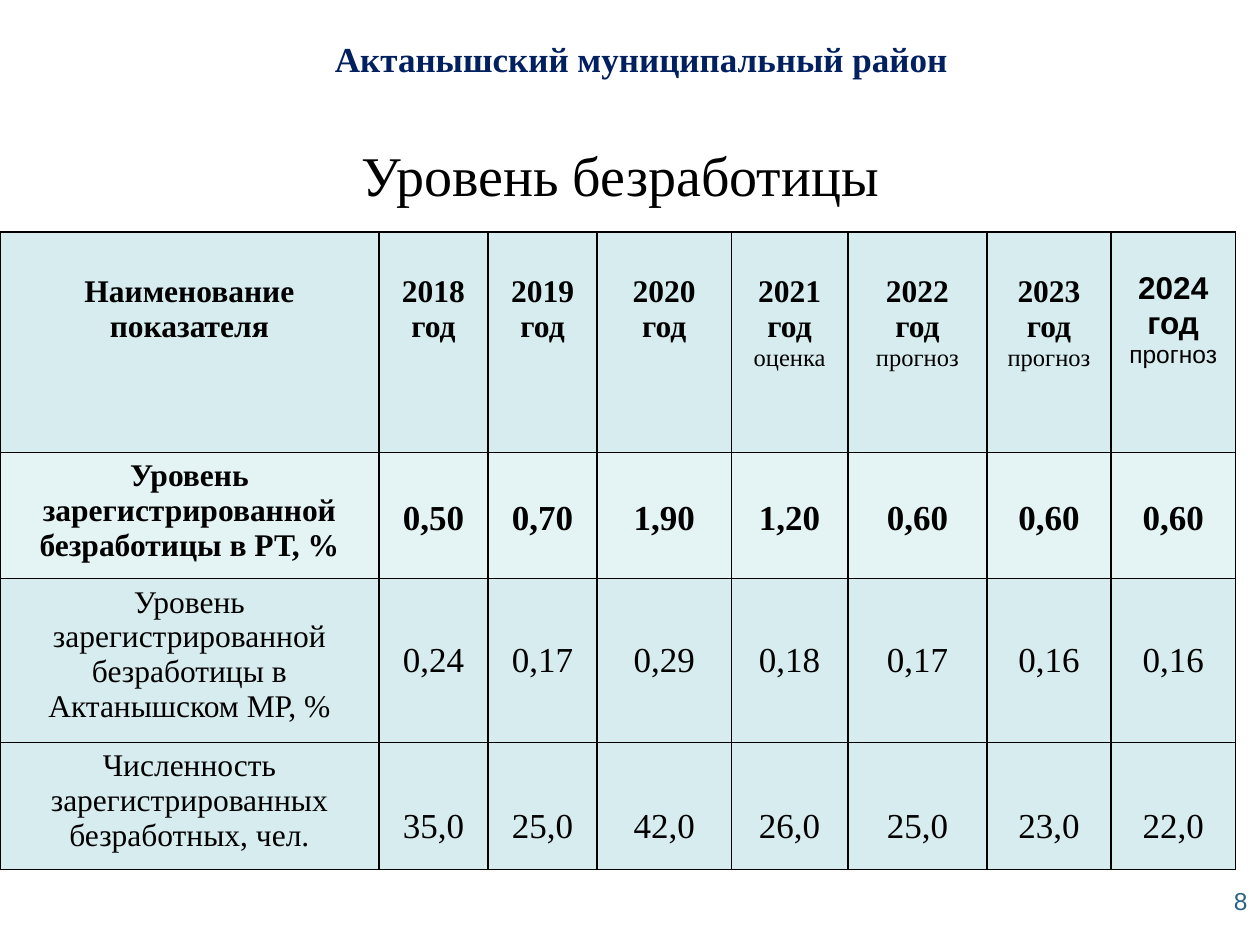
from lxml import etree
from pptx import Presentation
from pptx.dml.color import RGBColor
from pptx.enum import text as t
from pptx.oxml import ns
from pptx.util import Pt

SERIF = "Times New Roman"
MID = t.PP_ALIGN.CENTER


def write(frame, words, size=18, bold=False, font=SERIF, color="000000",
          align=MID, note=""):
    """Fill a frame, one paragraph per line; a note ends the last one at 14 pt."""
    frame.word_wrap = True
    lines = words.split("\n")
    for i, line in enumerate(lines):
        para = frame.paragraphs[0] if i == 0 else frame.add_paragraph()
        para.alignment = align
        runs = [(line, size, bold)]
        if i == len(lines) - 1:
            runs.append((note, 14, False))
        for part, pts, heavy in runs:
            if part:
                run = para.add_run()
                run.text = part
                run.font.size = Pt(pts)
                run.font.bold = heavy
                run.font.name = font
                run.font.color.rgb = RGBColor.from_string(color)


def border(cell, color="000000", width=1):
    props = cell._tc.get_or_add_tcPr()
    for side in ("a:lnL", "a:lnR", "a:lnT", "a:lnB"):
        line = etree.SubElement(props, ns.qn(side), w=str(Pt(width)))
        fill = etree.SubElement(line, ns.qn("a:solidFill"))
        etree.SubElement(fill, ns.qn("a:srgbClr"), val=color)


deck = Presentation()
deck.slide_width, deck.slide_height = Pt(720), Pt(540)
slide = deck.slides.add_slide(deck.slide_layouts[6])

# Headings and page number
texts = [
    ("Актанышский муниципальный район", (184.3, 18, 521.3, 31.7),
     dict(size=20, bold=True, color="002060", align=t.PP_ALIGN.LEFT)),
    ("Уровень безработицы", (40, 77, 629.3, 46), dict(size=32)),
    ("8", (552.2, 502.6, 167.8, 37.4),
     dict(size=14, font="Arial", color="2C6284", align=t.PP_ALIGN.RIGHT)),
]
for words, area, style in texts:
    box = slide.shapes.add_textbox(*map(Pt, area))
    write(box.text_frame, words, **style)

# Table
heads = [
    ("Наименование показателя", ""),
    ("2018\nгод", ""), ("2019\nгод", ""), ("2020\nгод", ""),
    ("2021\nгод\n", "оценка"),
    ("2022 год ", "прогноз"), ("2023 год ", "прогноз"), ("2024 год ", "прогноз"),
]
rows = [
    ("Уровень зарегистрированной безработицы в РТ, %",
     "0,50 0,70 1,90 1,20 0,60 0,60 0,60"),
    ("Уровень зарегистрированной безработицы в Актанышском МР, %",
     "0,24 0,17 0,29 0,18 0,17 0,16 0,16"),
    ("Численность зарегистрированных безработных, чел.",
     "35,0 25,0 42,0 26,0 25,0 23,0 22,0"),
]
wide = [216.5, 62.4, 62.4, 76.6, 66.7, 79.4, 71, 71]
high = [126, 71.6, 92.5, 72.7]
grid = slide.shapes.add_table(len(high), len(wide), Pt(0), Pt(132.6),
                              Pt(sum(wide)), Pt(sum(high))).table
for col, width in zip(grid.columns, wide):
    col.width = Pt(width)
for row, height in zip(grid.rows, high):
    row.height = Pt(height)

for c, (words, note) in enumerate(heads):
    cell = grid.cell(0, c)
    last = c == len(heads) - 1
    cell.margin_top = Pt(22 if last else 24.3)
    write(cell.text_frame, words, bold=True, note=note,
          font="Arial" if last else SERIF)

for r, (name, nums) in enumerate(rows, 1):
    bold = r == 1
    write(grid.cell(r, 0).text_frame, name, bold=bold)
    for c, num in enumerate(nums.split(), 1):
        cell = grid.cell(r, c)
        write(cell.text_frame, num, size=20, bold=bold)
        if r != 2:
            cell.margin_top = Pt(26.6)
        if r > 1:
            cell.vertical_anchor = t.MSO_ANCHOR.MIDDLE

for r, row in enumerate(grid.rows):
    for cell in row.cells:
        border(cell)
        cell.fill.solid()
        cell.fill.fore_color.rgb = RGBColor.from_string(
            "E4F3F4" if r == 1 else "D6ECEE")

deck.save("out.pptx")
